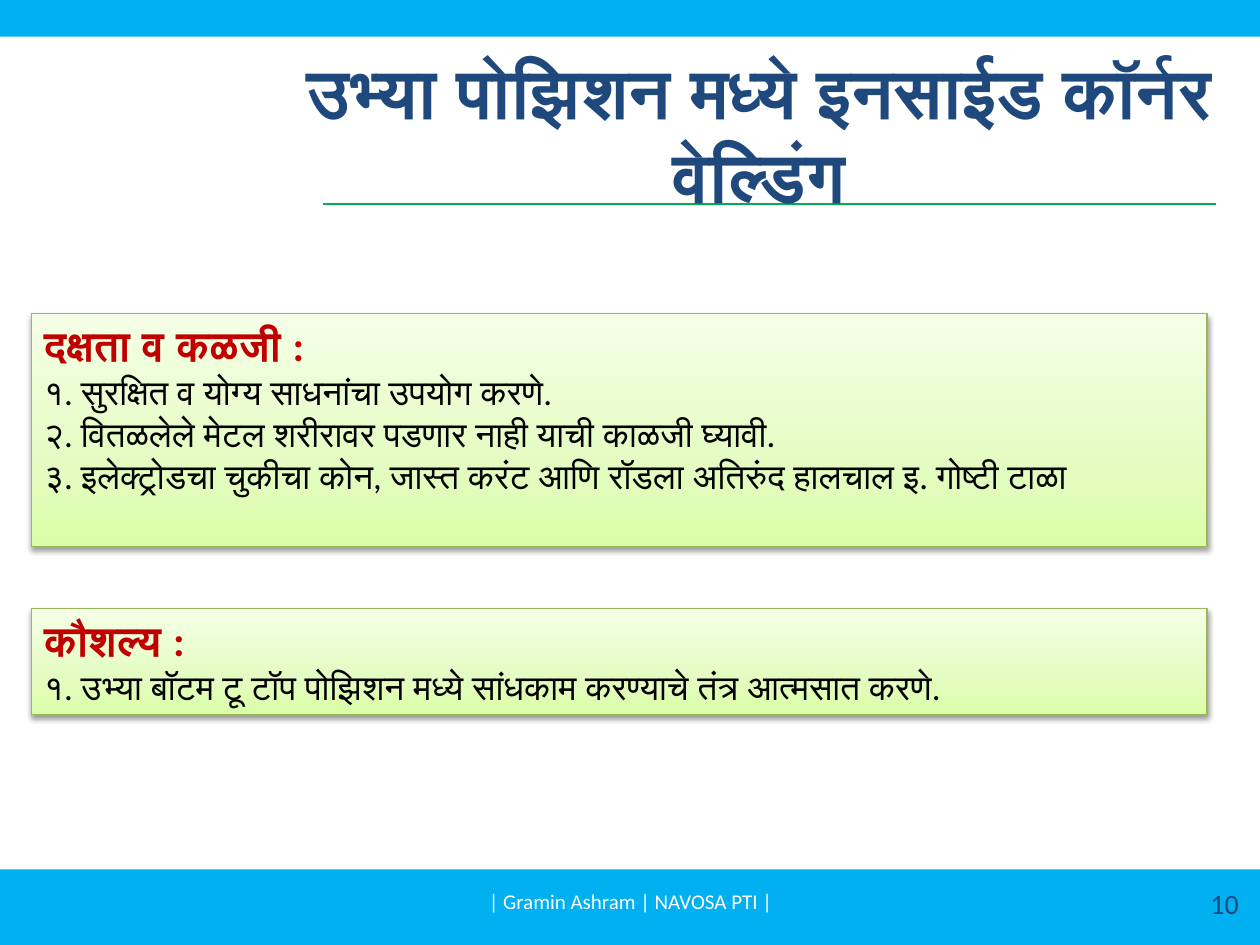
from copy import deepcopy

from lxml import etree
from pptx import Presentation
from pptx.dml.color import RGBColor
from pptx.enum.shapes import MSO_CONNECTOR as Conn, MSO_SHAPE as Kind
from pptx.enum.text import MSO_ANCHOR as Anchor, PP_ALIGN as Align
from pptx.oxml import parse_xml
from pptx.oxml.ns import nsdecls, qn
from pptx.util import Inches, Pt

SHADOW = f"""<a:effectLst {nsdecls('a')}>
<a:outerShdw blurRad="40000" dist="20000" dir="5400000" rotWithShape="0">
<a:srgbClr val="000000"><a:alpha val="38000"/></a:srgbClr>
</a:outerShdw></a:effectLst>"""


def color(code):
    return RGBColor.from_string(code)


def write(par, text, size=20, ink="000000", bold=False, align=Align.LEFT):
    par.alignment = align
    run = par.add_run()
    run.text = text
    font = run.font
    font.name, font.size, font.bold = "Calibri", Pt(size), bold
    font.color.rgb = color(ink)


class Page:
    sky, navy, red, white = "00B0F0", "1F497D", "C00000", "FFFFFF"
    green, edge = "00B050", "98B955"
    stops = [(0, "DAFDA7"), (0.35, "E4FCC2"), (1, "F5FFE7")]

    def __init__(self, slide):
        self.shapes = slide.shapes

    def rect(self, *at):
        shape = self.shapes.add_shape(Kind.RECTANGLE, *map(Inches, at))
        shape.shadow.inherit = False
        return shape

    def band(self, top, height):
        shape = self.rect(0, top, 10, height)
        shape.fill.solid()
        shape.fill.fore_color.rgb = color(self.sky)
        shape.line.fill.background()

    def rule(self, left, right, top):
        ends = map(Inches, (left, top, right, top))
        line = self.shapes.add_connector(Conn.STRAIGHT, *ends)
        line.line.color.rgb = color(self.green)
        line.line.width = Pt(0.75)
        etree.SubElement(line.element.spPr, qn("a:effectLst"))

    def label(self, at, text, **form):
        frame = self.shapes.add_textbox(*map(Inches, at)).text_frame
        frame.word_wrap = True
        frame.vertical_anchor = Anchor.MIDDLE
        write(frame.paragraphs[0], text, **form)

    def shade(self, shape):
        fill = shape.fill
        fill.gradient()
        fill.gradient_angle = 90
        first = shape.element.spPr.find(".//" + qn("a:gs"))
        first.addnext(deepcopy(first))
        for stop, (pos, code) in zip(fill.gradient_stops, self.stops):
            stop.position = pos
            stop.color.rgb = color(code)

    def panel(self, top, height, head, items):
        shape = self.rect(0.25, top, 9.33, height)
        self.shade(shape)
        shape.line.color.rgb = color(self.edge)
        shape.line.width = Pt(0.75)
        props = shape.element.spPr
        props.replace(props.find(qn("a:effectLst")), parse_xml(SHADOW))
        frame = shape.text_frame
        frame.word_wrap = True
        frame.vertical_anchor = Anchor.TOP
        write(frame.paragraphs[0], head, size=24, ink=self.red, bold=True)
        for item in items:
            write(frame.add_paragraph(), item)


def main():
    deck = Presentation()
    deck.slide_width, deck.slide_height = Inches(10), Inches(7.5)
    page = Page(deck.slides.add_slide(deck.slide_layouts[6]))

    # Bands and title rule
    page.band(6.9, 0.6)
    page.rule(2.56, 9.65, 1.62)
    page.band(0, 0.29)

    # Title
    page.label((2.05, 0.25, 7.95, 1.61),
               "उभ्या पोझिशन मध्ये इनसाईड कॉर्नर वेल्डिंग",
               size=40, ink=page.navy, bold=True, align=Align.CENTER)

    # Footer
    page.label((7.6, 6.97, 2.33, 0.4), "10",
               size=16, ink=page.navy, align=Align.RIGHT)
    page.label((3.42, 6.95, 3.17, 0.4), "| Gramin Ashram | NAVOSA PTI |",
               size=12, ink=page.white, align=Align.CENTER)

    # Care and skill panels
    page.panel(2.49, 1.85, "दक्षता व कळजी :", [
        "१. सुरक्षित व योग्य साधनांचा उपयोग करणे.",
        "२. वितळलेले मेटल शरीरावर पडणार नाही याची काळजी घ्यावी.",
        "३. इलेक्ट्रोडचा चुकीचा कोन, जास्त करंट आणि रॉडला अतिरुंद हालचाल इ. गोष्टी टाळा",
    ])
    page.panel(4.83, 0.84, "कौशल्य :", [
        "१. उभ्या बॉटम टू टॉप पोझिशन मध्ये सांधकाम करण्याचे तंत्र आत्मसात करणे.",
    ])

    deck.save("out.pptx")


if __name__ == "__main__":
    main()
